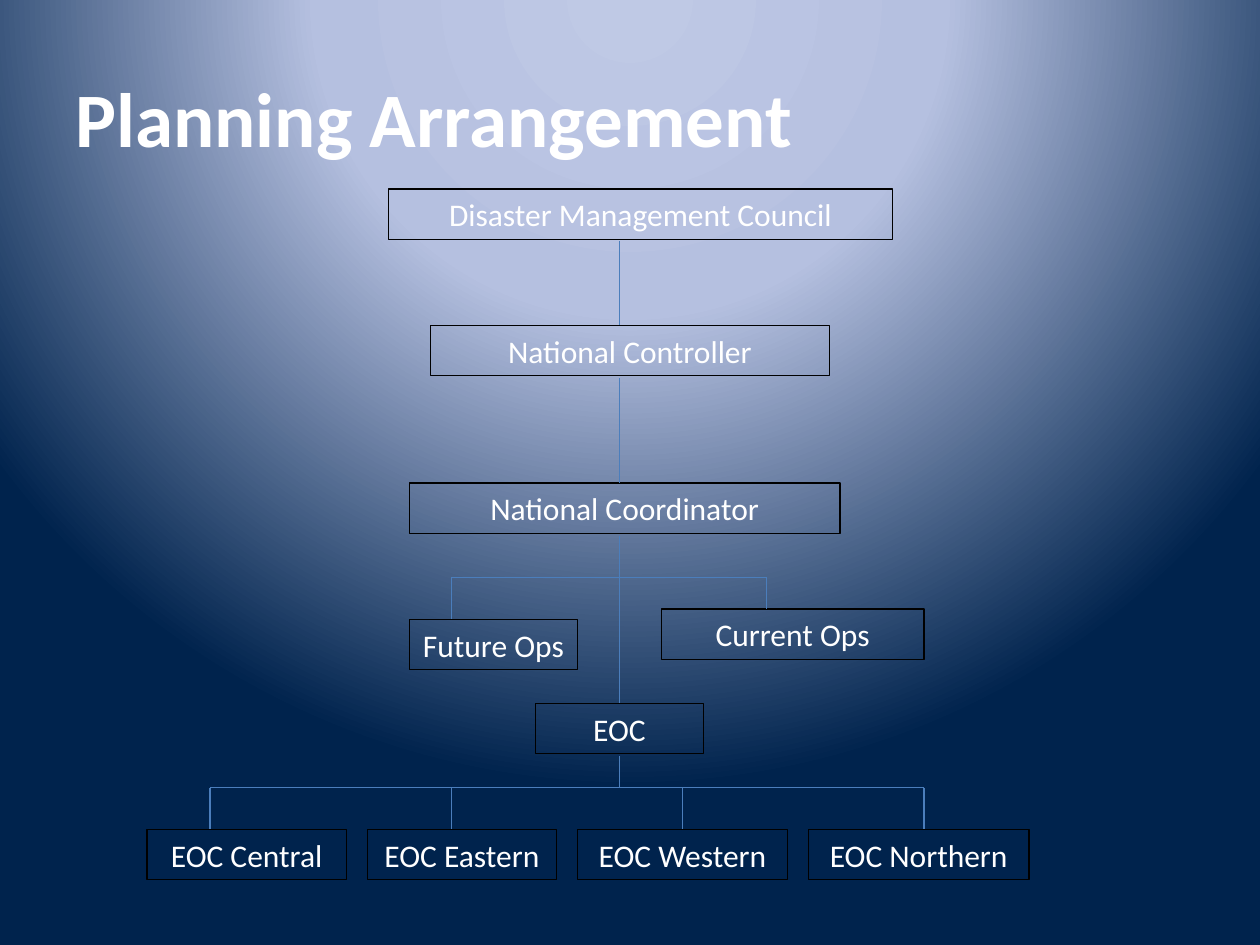
import pptx
import pptx.util
import pptx.oxml
import pptx.oxml.ns
import pptx.dml.color
import pptx.enum.text
import pptx.enum.shapes

HEAD = "Planning Arrangement"
UNIT = 1 / 12
TALL = 0.4 * 12
BOXES = [
    ("Disaster Management Council", 37, 18, 48),
    ("National Controller", 41, 31, 38),
    ("National Coordinator", 39, 46, 41),
    ("Future Ops", 39, 59, 16),
    ("Current Ops", 63, 58, 25),
    ("EOC", 51, 67, 16),
    ("EOC Central", 14, 79, 19),
    ("EOC Eastern", 35, 79, 18),
    ("EOC Western", 55, 79, 20),
    ("EOC Northern", 77, 79, 21),
]
STEM = 59
SPANS = [(23, 31), (36, 46), (51, 67), (72, 75)]
FORKS = [
    (55, [(43, 59), (73, 58)]),
    (75, [(20, 79), (43, 79), (65, 79), (88, 79)]),
]
STOPS = [(0, "BFC9E5"), (40, "B5C0E0"), (100, "00234D")]
FOCUS = {"l": 50, "t": -80, "r": 50, "b": 180}
FONT = {"name": "Calibri", "size": pptx.util.Pt(18), "bold": False}
TITLE = {**FONT, "size": pptx.util.Pt(44), "bold": True}
FRAME = {
    "word_wrap": True,
    "auto_size": pptx.enum.text.MSO_AUTO_SIZE.SHAPE_TO_FIT_TEXT,
    "vertical_anchor": pptx.enum.text.MSO_ANCHOR.TOP,
}
HOLD = {
    "word_wrap": True,
    "auto_size": pptx.enum.text.MSO_AUTO_SIZE.NONE,
    "vertical_anchor": pptx.enum.text.MSO_ANCHOR.MIDDLE,
}
ALIGN = pptx.enum.text.PP_ALIGN


def color(code):
    return pptx.dml.color.RGBColor.from_string(code)


def grid(*cells):
    return [pptx.util.Inches(cell * UNIT) for cell in cells]


def apply(item, style):
    for key, value in style.items():
        setattr(item, key, value)


def write(shape, text, font, frame, align):
    apply(shape.text_frame, frame)
    para = shape.text_frame.paragraphs[0]
    para.alignment = align
    run = para.add_run()
    run.text = text
    apply(run.font, font)
    run.font.color.rgb = color("FFFFFF")


def stroke(line, code):
    line.color.rgb = color(code)
    line.width = pptx.util.Pt(0.75)


def paint(slide):
    slide.background.fill.solid()
    stops = "".join(
        f'<a:gs pos="{pos * 1000}"><a:srgbClr val="{code}"/></a:gs>'
        for pos, code in STOPS
    )
    focus = " ".join(f'{side}="{part * 1000}"' for side, part in FOCUS.items())
    back = slide.element.cSld.bg.bgPr
    back.replace(back[0], pptx.oxml.parse_xml(
        f'<a:gradFill {pptx.oxml.ns.nsdecls("a")} rotWithShape="1">'
        f'<a:gsLst>{stops}</a:gsLst><a:path path="circle">'
        f'<a:fillToRect {focus}/></a:path></a:gradFill>'
    ))


def link(slide, *ends):
    line = slide.shapes.add_connector(
        pptx.enum.shapes.MSO_CONNECTOR.STRAIGHT, *grid(*ends)
    )
    stroke(line.line, "4B7EBC")
    line.element.spPr.append(pptx.oxml.parse_xml(
        f'<a:effectLst {pptx.oxml.ns.nsdecls("a")}/>'
    ))


def main():
    deck = pptx.Presentation()
    deck.slide_width, deck.slide_height = grid(120, 90)
    slide = deck.slides.add_slide(deck.slide_layouts[5])
    paint(slide)

    title = slide.shapes.title
    sides = ("left", "top", "width", "height")
    apply(title, dict(zip(sides, grid(6, 3.6, 108, 15))))
    write(title, HEAD, TITLE, HOLD, ALIGN.LEFT)

    for text, left, top, wide in BOXES:
        box = slide.shapes.add_textbox(*grid(left, top, wide, TALL))
        stroke(box.line, "000000")
        write(box, text, FONT, FRAME, ALIGN.CENTER)

    for top, base in SPANS:
        link(slide, STEM, top, STEM, base)
    for top, legs in FORKS:
        link(slide, legs[0][0], top, legs[-1][0], top)
        for left, base in legs:
            link(slide, left, top, left, base)

    deck.save("out.pptx")


if __name__ == "__main__":
    main()
